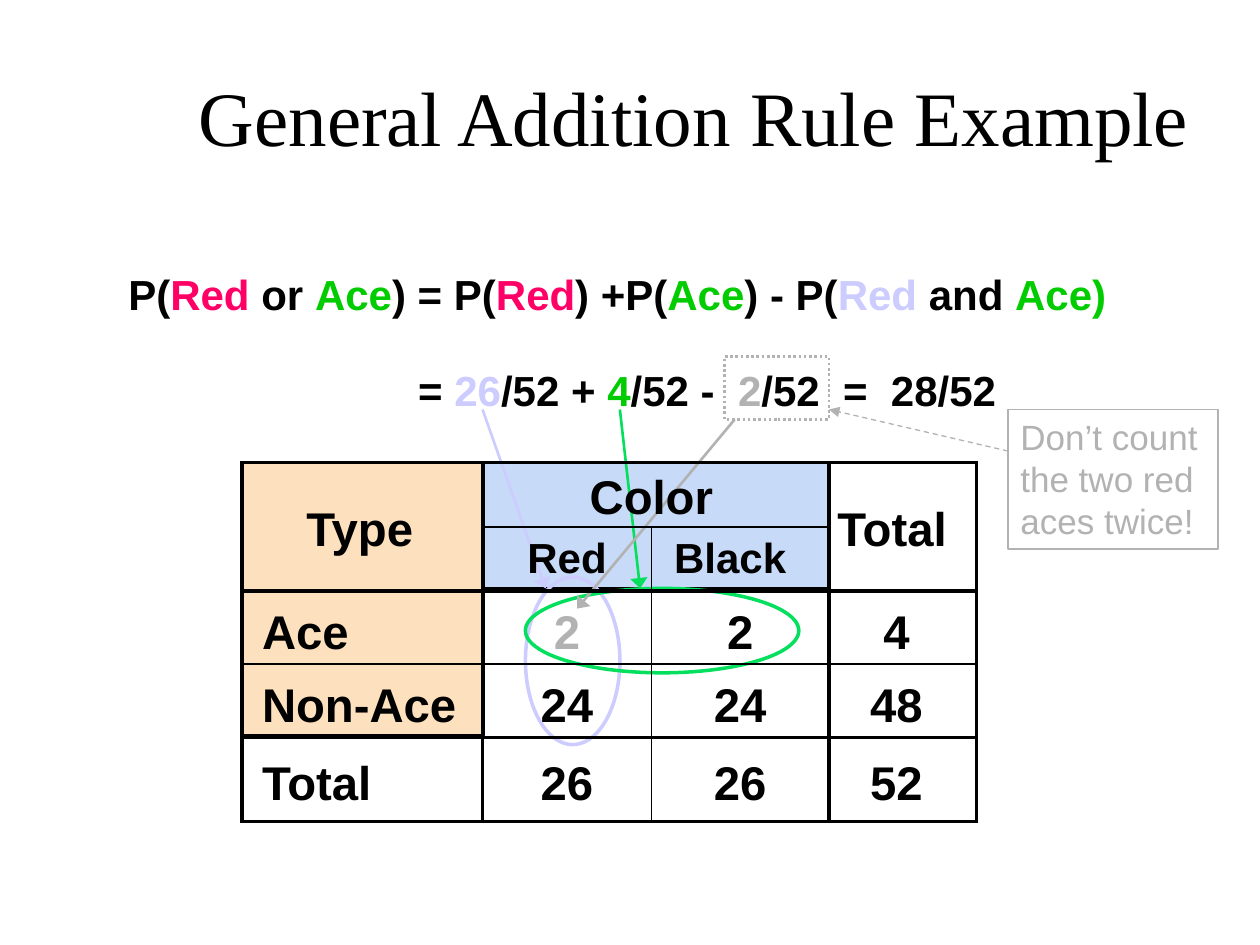
from lxml.etree import SubElement
from pptx import Presentation
from pptx.dml.color import RGBColor
from pptx.enum.dml import MSO_LINE
from pptx.enum.shapes import MSO_CONNECTOR, MSO_SHAPE
from pptx.enum.text import MSO_ANCHOR, MSO_AUTO_SIZE, PP_ALIGN
from pptx.oxml.ns import qn
from pptx.util import Inches, Pt

BLACK = RGBColor(0x00, 0x00, 0x00)
PINK = RGBColor(0xFF, 0x00, 0x66)
GREEN = RGBColor(0x00, 0xCC, 0x00)
BRIGHT_GREEN = RGBColor(0x04, 0xE0, 0x5D)
LAVENDER = RGBColor(0xCC, 0xCC, 0xFF)
GRAY = RGBColor(0xB2, 0xB2, 0xB2)
PEACH = RGBColor(0xFD, 0xE0, 0xBD)
BLUE = RGBColor(0xC7, 0xDA, 0xF7)

TITLE = "General Addition Rule Example"
RULE = [
    ("P(", BLACK), ("Red ", PINK), ("or ", BLACK), ("Ace", GREEN),
    (") = P(", BLACK), ("Red", PINK), (") +P(", BLACK), ("Ace", GREEN),
    (") - P(", BLACK), ("Red ", LAVENDER), ("and ", BLACK), ("Ace)", GREEN),
]
RESULT = [
    ("= ", BLACK), ("26", LAVENDER), ("/52 + ", BLACK), ("4", GREEN),
    ("/52 -  ", BLACK), ("2", GRAY), ("/52  =  28/52", BLACK),
]
NOTE = "Don’t count the two red aces twice!"

ROWS = [
    ["Type", "Color", "", "Total"],
    ["", "Red", "Black", ""],
    ["Ace", "2", "2", "4"],
    ["Non-Ace", "24", "24", "48"],
    ["Total", "26", "26", "52"],
]
SPANS = {(0, 0): (2, 1), (0, 1): (1, 2), (0, 3): (2, 1)}
COLUMN_EDGES = [1.92, 3.83, 5.17, 6.58, 7.75]
ROW_EDGES = [3.67, 4.17, 4.67, 5.25, 5.83, 6.5]
COLUMN_RULES = [2.25, 2.25, 1, 2.25, 2.25]
ROW_RULES = [2.25, 1.5, 2.25, 1, 2.25, 2.25]
RIGHT_MARGINS = {(0, 0): 0.04, (0, 1): 0.07, (0, 3): 0.17, (1, 2): 0.16}

PANELS = [
    ((3.83, 3.67, 2.75, 1), BLUE),
    ((1.92, 3.67, 1.92, 2.17), PEACH),
]
OUTLINES = [
    (MSO_SHAPE.OVAL, (4.17, 4.58, 0.75, 1.33), LAVENDER, 2, None),
    (MSO_SHAPE.OVAL, (4.17, 4.67, 2.17, 0.67), BRIGHT_GREEN, 2, None),
    (MSO_SHAPE.RECTANGLE, (5.75, 2.83, 0.83, 0.5), GRAY, 1.5, MSO_LINE.ROUND_DOT),
]
ARROWS = [
    ((3.83, 3.25), (4.33, 4.67), LAVENDER, 1.5, None),
    ((4.92, 3.25), (5.08, 4.67), BRIGHT_GREEN, 1.5, None),
    ((5.83, 3.33), (4.58, 4.83), GRAY, 1.5, None),
    ((8, 3.58), (6.58, 3.25), GRAY, 0.75, MSO_LINE.DASH),
]


def set_font(paragraph, size, color=BLACK, bold=True, name="Arial"):
    font = paragraph.font
    font.name, font.size, font.bold = name, Pt(size), bold
    font.color.rgb = color


def add_formula(slide, box, pieces):
    frame = slide.shapes.add_textbox(*map(Inches, box)).text_frame
    frame.word_wrap = True
    paragraph = frame.paragraphs[0]
    set_font(paragraph, 24)
    for text, color in pieces:
        run = paragraph.add_run()
        run.text = text
        run.font.color.rgb = color


def style_line(line, color, width, dash):
    line.color.rgb = color
    line.width = Pt(width)
    if dash:
        line.dash_style = dash


def add_outline(slide, kind, box, color, width, dash):
    shape = slide.shapes.add_shape(kind, *map(Inches, box))
    shape.shadow.inherit = False
    shape.fill.background()
    style_line(shape.line, color, width, dash)
    return shape


def add_panel(slide, box, color):
    panel = add_outline(slide, MSO_SHAPE.RECTANGLE, box, BLACK, 1.5, None)
    panel.fill.solid()
    panel.fill.fore_color.rgb = color


def add_arrow(slide, start, end, color, width, dash):
    connector = slide.shapes.add_connector(
        MSO_CONNECTOR.STRAIGHT, *map(Inches, start + end))
    style_line(connector.line, color, width, dash)
    head_width = "med" if dash else "lg"
    SubElement(connector.line._get_or_add_ln(), qn("a:tailEnd"),
               type="triangle", w=head_width, len="med")
    SubElement(connector._element.spPr, qn("a:effectLst"))


def set_borders(cell, widths):
    properties = cell._tc.get_or_add_tcPr()
    for position, (side, width) in enumerate(widths):
        border = properties.makeelement(qn(f"a:{side}"), {"w": str(Pt(width))})
        if width:
            fill = SubElement(border, qn("a:solidFill"))
            SubElement(fill, qn("a:srgbClr"), val=str(BLACK))
        else:
            SubElement(border, qn("a:noFill"))
        properties.insert(position, border)


def write_cell(cell, row, column):
    cell.text = ROWS[row][column]
    cell.fill.background()
    cell.vertical_anchor = MSO_ANCHOR.MIDDLE
    is_label = column == 0 and row > 1
    cell.margin_left = Inches(0.16 if is_label else 0)
    default_margin = 0.1 if column == 3 else 0
    cell.margin_right = Inches(RIGHT_MARGINS.get((row, column), default_margin))
    cell.margin_top = Inches((0.06, 0, 0.08, 0.08, 0.08)[row])
    cell.margin_bottom = 0
    paragraph = cell.text_frame.paragraphs[0]
    paragraph.alignment = PP_ALIGN.LEFT if is_label else PP_ALIGN.CENTER
    is_overlap = (row, column) == (2, 1)
    set_font(paragraph, 24 if row == 1 else 27, GRAY if is_overlap else BLACK)


def add_card_table(slide):
    left, top = COLUMN_EDGES[0], ROW_EDGES[0]
    box = (left, top, COLUMN_EDGES[-1] - left, ROW_EDGES[-1] - top)
    table = slide.shapes.add_table(
        len(ROWS), len(ROWS[0]), *map(Inches, box)).table
    table.first_row = table.horz_banding = False
    for column, start, end in zip(table.columns, COLUMN_EDGES, COLUMN_EDGES[1:]):
        column.width = Inches(end - start)
    for row, start, end in zip(table.rows, ROW_EDGES, ROW_EDGES[1:]):
        row.height = Inches(end - start)

    for (row, column), (height, width) in SPANS.items():
        table.cell(row, column).merge(
            table.cell(row + height - 1, column + width - 1))

    for row, texts in enumerate(ROWS):
        for column in range(len(texts)):
            cell = table.cell(row, column)
            write_cell(cell, row, column)
            height, width = SPANS.get((row, column), (1, 1))
            inside_tall = row == 1 and column in (0, 3)
            inside_wide = (row, column) == (0, 2)
            set_borders(cell, [
                ("lnL", 0 if inside_wide else COLUMN_RULES[column]),
                ("lnR", COLUMN_RULES[column + width]),
                ("lnT", 0 if inside_tall else ROW_RULES[row]),
                ("lnB", ROW_RULES[row + height]),
            ])


def main():
    presentation = Presentation()
    presentation.slide_width, presentation.slide_height = Inches(10), Inches(7.5)
    slide = presentation.slides.add_slide(presentation.slide_layouts[5])

    title = slide.shapes.title
    title.left, title.top, title.width, title.height = map(
        Inches, (1.25, 0.5, 8.52, 0.83))
    title.text_frame.text = TITLE
    title.text_frame.auto_size = MSO_AUTO_SIZE.NONE
    title.text_frame.vertical_anchor = MSO_ANCHOR.MIDDLE
    paragraph = title.text_frame.paragraphs[0]
    paragraph.alignment = PP_ALIGN.CENTER
    set_font(paragraph, 44, bold=False, name="Times New Roman")

    for panel in PANELS:
        add_panel(slide, *panel)
    for outline in OUTLINES:
        add_outline(slide, *outline)
    for arrow in ARROWS:
        add_arrow(slide, *arrow)
    add_formula(slide, (0.92, 2.08, 8.33, 0.5), RULE)
    add_formula(slide, (3.22, 2.84, 5.11, 0.5), RESULT)
    add_card_table(slide)

    note = add_outline(
        slide, MSO_SHAPE.RECTANGLE, (8, 3.25, 1.67, 1.11), GRAY, 1, None)
    note.text_frame.text = NOTE
    note.text_frame.word_wrap = True
    note.text_frame.vertical_anchor = MSO_ANCHOR.TOP
    note.text_frame.paragraphs[0].alignment = PP_ALIGN.LEFT
    set_font(note.text_frame.paragraphs[0], 20, GRAY, bold=False)

    presentation.save("out.pptx")


if __name__ == "__main__":
    main()
